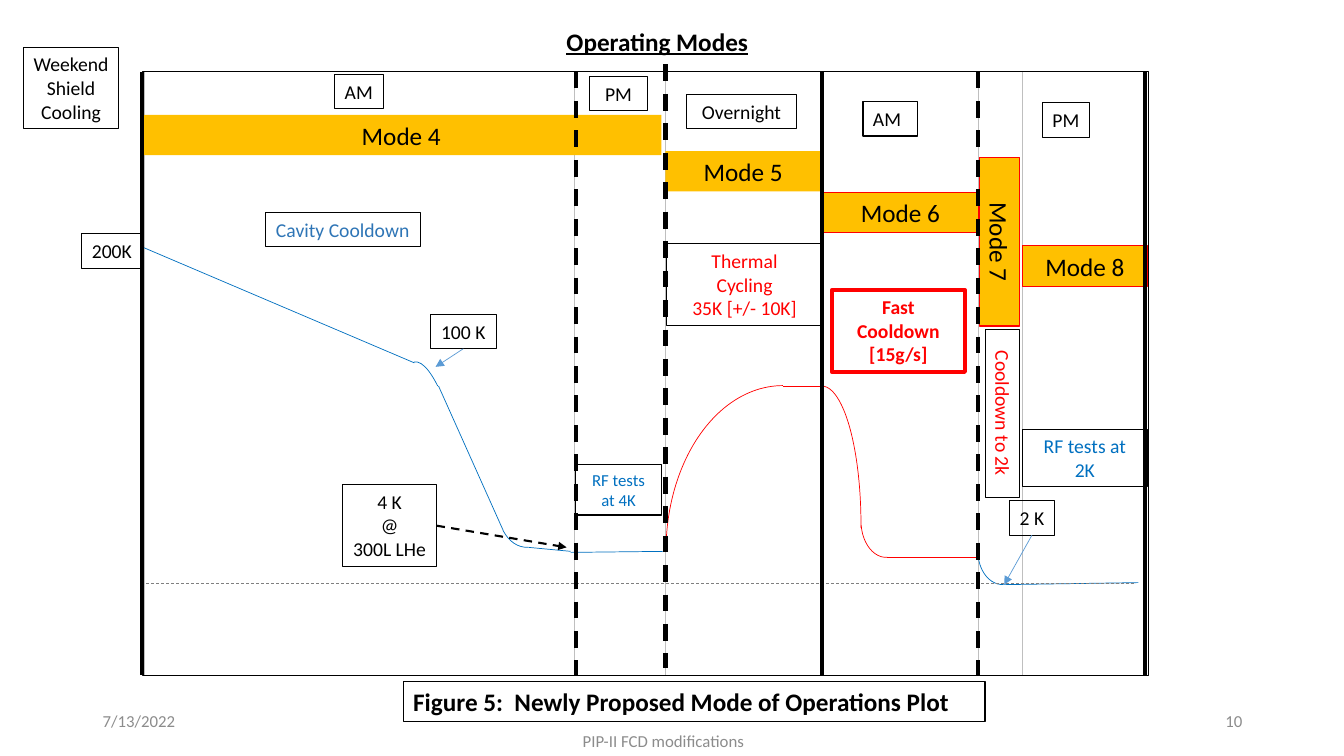
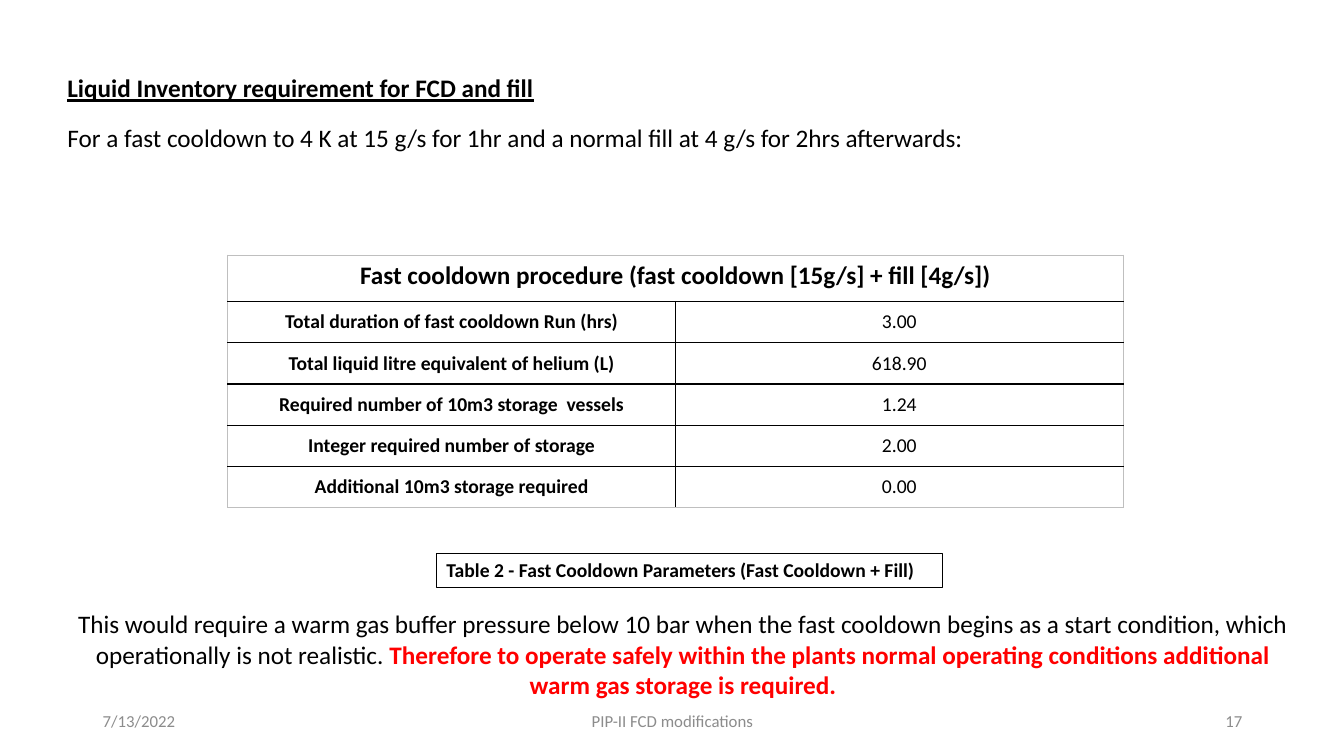
from pptx import Presentation
from pptx.dml.color import RGBColor
from pptx.enum.dml import MSO_LINE
from pptx.enum.shapes import MSO_CONNECTOR, MSO_SHAPE
from pptx.enum.text import MSO_ANCHOR, PP_ALIGN
from pptx.oxml.ns import qn
from pptx.util import Inches, Pt
from lxml import etree

LEFT, CENTER, RIGHT = PP_ALIGN.LEFT, PP_ALIGN.CENTER, PP_ALIGN.RIGHT
MIDDLE = MSO_ANCHOR.MIDDLE
DASH = MSO_LINE.DASH
STRAIGHT = MSO_CONNECTOR.STRAIGHT
RECTANGLE, ARC = MSO_SHAPE.RECTANGLE, MSO_SHAPE.ARC
BOTTOM_SIDE, RIGHT_SIDE = 2, 3

FONT = "Calibri"
BLACK, WHITE, RED, AMBER = "000000", "FFFFFF", "FF0000", "FFC000"
BLUE, DARK_BLUE, SKY = "0070C0", "2E75B6", "5B9BD5"
GRAY, DIM, PALE = "8C8C8C", "7F7F7F", "BFBFBF"

DATE = "7/13/2022"
FOOTER = "PIP-II FCD modifications"

# Operating modes plot
PLOT_TOP, PLOT_HEIGHT = 0.71, 5.99
PLOT_FRAME = (1.42, PLOT_TOP, 9.97, PLOT_HEIGHT)
PANELS = [(1.43, 5.7), (5.7, 6.6), (8.15, 9.7), (9.7, 10.14)]
WALLS = [  # x, top, dash
    (1.41, PLOT_TOP, None), (5.71, PLOT_TOP, DASH), (6.6, 0.64, DASH),
    (8.15, PLOT_TOP, None), (9.7, PLOT_TOP, DASH), (11.36, PLOT_TOP, None),
]
ARCS = [  # left, top, width, height, rotation, start and end angle, colour
    (6.12, 4.31, 3.29, 2.32, 270, 270, 0, RED),
    (7.76, 3.83, 0.78, 2.76, 0, 270, 4.08, RED),
    (8.54, 4.86, 0.47, 0.67, 175.8, 270, 0, RED),
    (4.94, 4.7, 0.54, 0.73, 175.8, 270, 322.76, BLUE),
    (4.07, 3.57, 0.47, 1.76, 347.3, 269.53, 286.12, BLUE),
    (9.7, 5.18, 0.46, 0.62, 175.8, 270, 353.54, BLUE),
]
CURVE_LINES = [  # start, end, colour
    ((7.77, 3.83), (8.15, 3.83), RED),
    ((8.8, 5.53), (9.71, 5.53), RED),
    ((1.41, 2.45), (4.11, 3.6), BLUE),
    ((4.35, 3.83), (4.99, 5.26), BLUE),
    ((5.24, 5.43), (5.66, 5.47), BLUE),
    ((5.66, 5.48), (6.61, 5.47), BLUE),
    ((9.96, 5.8), (11.29, 5.78), BLUE),
]
MODES = [  # text, left, top, width, rotation, outline
    ("Mode 4", 1.4, 1.14, 5.16, 0, None),
    ("Mode 5", 6.6, 1.5, 1.54, 0, None),
    ("Mode 6", 8.15, 1.91, 1.56, 0, RED),
    ("Mode 7", 9.08, 2.2, 1.67, 90, RED),
    ("Mode 8", 10.14, 2.44, 1.24, 0, RED),
]
LABELS = [  # text, position and size, options
    ("RF tests at 4K", (5.71, 4.61, 0.85, 0.5), dict(size=12, color=BLUE)),
    ("RF tests at 2K", (10.14, 4.26, 1.24, 0.57), dict(color=BLUE)),
    ("Thermal\nCycling\n35K [+/- 10K]", (6.61, 2.42, 1.55, 0.81), dict(color=RED)),
    ("Fast\nCooldown [15g/s]", (8.25, 2.88, 1.32, 0.81),
     dict(color=RED, bold=True, outline=RED, weight=3)),
    ("Cooldown to 2k", (9.11, 3.93, 1.67, 0.34), dict(color=RED, rotation=90)),
    ("Cavity Cooldown", (2.63, 2.11, 1.54, 0.34), dict(color=DARK_BLUE, wrap=False)),
    ("200K", (0.81, 2.32, 0.6, 0.34), dict(wrap=False)),
    ("100 K", (4.27, 3.12, 0.65, 0.34), dict(wrap=False)),
    ("2 K", (10.01, 4.97, 0.45, 0.34), dict(wrap=False)),
    ("4 K\n@\n300L LHe", (3.4, 4.81, 0.93, 0.81), dict(wrap=False)),
    ("PM", (5.85, 0.76, 0.57, 0.34), {}),
    ("AM", (3.32, 0.74, 0.48, 0.34), dict(align=LEFT)),
    ("Overnight", (6.81, 0.94, 1.09, 0.34), {}),
    ("AM", (8.56, 1.01, 0.54, 0.34), dict(align=LEFT)),
    ("PM", (10.34, 1.02, 0.47, 0.34), dict(align=LEFT)),
    ("Weekend\nShield\nCooling", (0.23, 0.47, 0.95, 0.81), {}),
    ("Figure 5:  Newly Proposed Mode of Operations Plot", (4, 6.76, 5.77, 0.4),
     dict(size=18, bold=True, align=LEFT)),
]
POINTERS = [  # label, side, end, colour, weight, dash
    ("4 K\n@\n300L LHe", RIGHT_SIDE, (5.62, 5.43), BLACK, 1.5, DASH),
    ("100 K", BOTTOM_SIDE, (4.32, 3.64), SKY, 0.5, None),
    ("2 K", BOTTOM_SIDE, (9.96, 5.8), SKY, 0.5, None),
]

# Liquid inventory table
TABLE_TITLE = "Fast cooldown procedure (fast cooldown [15g/s] + fill [4g/s])"
TABLE_ROWS = [
    ("Total duration of fast cooldown Run (hrs)", "3.00"),
    ("Total liquid litre equivalent of helium (L)", "618.90"),
    ("Required number of 10m3 storage  vessels", "1.24"),
    ("Integer required number of storage", "2.00"),
    ("Additional 10m3 storage required", "0.00"),
]
INTRO = "For a fast cooldown to 4 K at 15 g/s for 1hr and a normal fill at 4 g/s for 2hrs afterwards:"
CONDITION = ("This would require a warm gas buffer pressure below 10 bar when the fast cooldown "
             "begins as a start condition, which operationally is not realistic. ")
CONCLUSION = ("Therefore to operate safely within the plants normal operating conditions "
              "additional warm gas storage is required.")


def rgb(color):
    return RGBColor.from_string(color)


def inches(*lengths):
    return [Inches(length) for length in lengths]


def style_line(line, color, weight, dash=None):
    line.color.rgb = rgb(color)
    line.width = Pt(weight)
    if dash:
        line.dash_style = dash


def style_text(frame, size, color=BLACK, bold=False, underline=False, align=LEFT):
    for para in frame.paragraphs:
        para.alignment = align
        for span in para.runs:
            font = span.font
            font.name, font.size = FONT, Pt(size)
            font.bold, font.underline = bold, underline
            font.color.rgb = rgb(color)


def add_text(page, text, place, size=18, outline=None, weight=0.75, fill=None,
             rotation=0, wrap=True, anchor=MSO_ANCHOR.TOP, **style):
    box = page.shapes.add_textbox(*inches(*place))
    box.rotation = rotation
    if fill:
        box.fill.solid()
        box.fill.fore_color.rgb = rgb(fill)
    if outline:
        style_line(box.line, outline, weight)
    frame = box.text_frame
    frame.word_wrap, frame.vertical_anchor = wrap, anchor
    frame.text = text
    style_text(frame, size, **style)
    return box


def add_outline(page, preset, place, color, weight):
    shape = page.shapes.add_shape(preset, *inches(*place))
    shape.shadow.inherit = False
    shape.fill.background()
    style_line(shape.line, color, weight)
    return shape


def add_line(page, start, end, color, weight, dash=None, arrow=False):
    line = page.shapes.add_connector(STRAIGHT, *inches(*start, *end))
    style_line(line.line, color, weight, dash)
    properties = line._element.spPr
    if arrow:
        etree.SubElement(properties.find(qn("a:ln")), qn("a:tailEnd"), type="triangle")
    etree.SubElement(properties, qn("a:effectLst"))
    return line


def add_heading(page, text, place, **options):
    add_text(page, text, place, bold=True, underline=True, **options)


def add_footer(page, number, left=4.42, top=6.95):
    """Add date, centred footer at left and top, and page number."""
    for text, x, y, width, align in [(DATE, 0.92, 6.95, 3, LEFT),
                                     (FOOTER, left, top, 4.5, CENTER),
                                     (str(number), 9.42, 6.95, 3, RIGHT)]:
        add_text(page, text, (x, y, width, 0.4), size=12, color=GRAY,
                 align=align, anchor=MIDDLE)


def set_borders(cell, sides):
    """Draw cell borders from a dict of side tag to (colour, points)."""
    properties = cell._tc.get_or_add_tcPr()
    for index, side in enumerate(("lnL", "lnR", "lnT", "lnB")):
        color, weight = sides[side]
        border = etree.Element(qn("a:" + side), w=str(Pt(weight)))
        fill = etree.SubElement(border, qn("a:solidFill"))
        etree.SubElement(fill, qn("a:srgbClr"), val=color)
        properties.insert(index, border)


def add_inventory_table(page):
    row_count = len(TABLE_ROWS) + 1
    graphic = page.shapes.add_table(row_count, 2, *inches(2.26, 2.53, 8.89, 2.49))
    table = graphic.table
    table.first_row = table.horz_banding = False
    for column in table.columns:
        column.width = Inches(4.44)
    for index, row in enumerate(table.rows):
        row.height = Inches(0.41 if index else 0.46)
    table.cell(0, 0).merge(table.cell(0, 1))
    outer, inner = (PALE, 0.75), (BLACK, 1)
    for r, texts in enumerate([(TABLE_TITLE, "")] + TABLE_ROWS):
        for c, text in enumerate(texts):
            cell = table.cell(r, c)
            cell.fill.background()
            set_borders(cell, {
                "lnL": inner if c and r else outer,
                "lnR": outer if c or not r else inner,
                "lnT": inner if r else outer,
                "lnB": outer if r == row_count - 1 else inner,
            })
            if not text:
                continue
            cell.text_frame.text = text
            style_text(cell.text_frame, 14 if r else 18, bold=c == 0, align=CENTER)
            if r:
                cell.vertical_anchor = MIDDLE
                cell.margin_left = cell.margin_right = 0
                cell.margin_top = cell.margin_bottom = 0


def build_modes(page):
    for left, right in PANELS:
        add_outline(page, RECTANGLE, (left, PLOT_TOP, right - left, PLOT_HEIGHT), PALE, 0.25)
    for *place, rotation, start, end, color in ARCS:
        arc = add_outline(page, ARC, place, color, 0.5)
        arc.rotation = rotation
        # One adjustment unit is 100000 / 60000 of a degree
        arc.adjustments[0], arc.adjustments[1] = start * 0.6, end * 0.6
    for start, end, color in CURVE_LINES:
        add_line(page, start, end, color, 0.5)
    add_line(page, (1.45, 5.79), (11.25, 5.79), DIM, 0.5, DASH)
    for text, left, top, width, rotation, outline in MODES:
        add_text(page, text, (left, top, width, 0.4), fill=AMBER, outline=outline,
                 rotation=rotation, align=CENTER)
    add_outline(page, RECTANGLE, PLOT_FRAME, BLACK, 1)
    add_heading(page, "Operating Modes", (5.52, 0.21, 2.02, 0.4), fill=WHITE, wrap=False)
    defaults = dict(size=14, outline=BLACK, align=CENTER)
    boxes = {}
    for text, place, options in LABELS:
        boxes[text] = add_text(page, text, place, **{**defaults, **options})
    for label, side, end, color, weight, dash in POINTERS:
        pointer = add_line(page, (0, 0), end, color, weight, dash, arrow=True)
        pointer.begin_connect(boxes[label], side)
    for x, top, dash in WALLS:
        add_line(page, (x, top), (x, top + PLOT_HEIGHT), BLACK, 3, dash)
    add_footer(page, 10, left=4.33, top=7.15)


def build_inventory(page):
    add_heading(page, "Liquid Inventory requirement for FCD and fill", (0.57, 0.67, 9.16, 0.4))
    add_text(page, INTRO, (0.57, 1.16, 9.16, 0.4))
    add_inventory_table(page)
    add_text(page, "Table 2 - Fast Cooldown Parameters (Fast Cooldown + Fill)",
             (4.33, 5.49, 5.02, 0.34), size=14, bold=True, outline=BLACK)
    note = add_text(page, CONDITION, (0.57, 5.99, 12.41, 1.01))
    para = note.text_frame.paragraphs[0]
    conclusion = para.add_run()
    conclusion.text = CONCLUSION
    style_text(note.text_frame, 18, align=CENTER)
    conclusion.font.bold = True
    conclusion.font.color.rgb = rgb(RED)
    add_footer(page, 17)


def main():
    deck = Presentation()
    deck.slide_width, deck.slide_height = inches(13.33, 7.5)
    blank = deck.slide_layouts[6]
    for build in (build_modes, build_inventory):
        build(deck.slides.add_slide(blank))
    deck.save("out.pptx")


if __name__ == "__main__":
    main()
